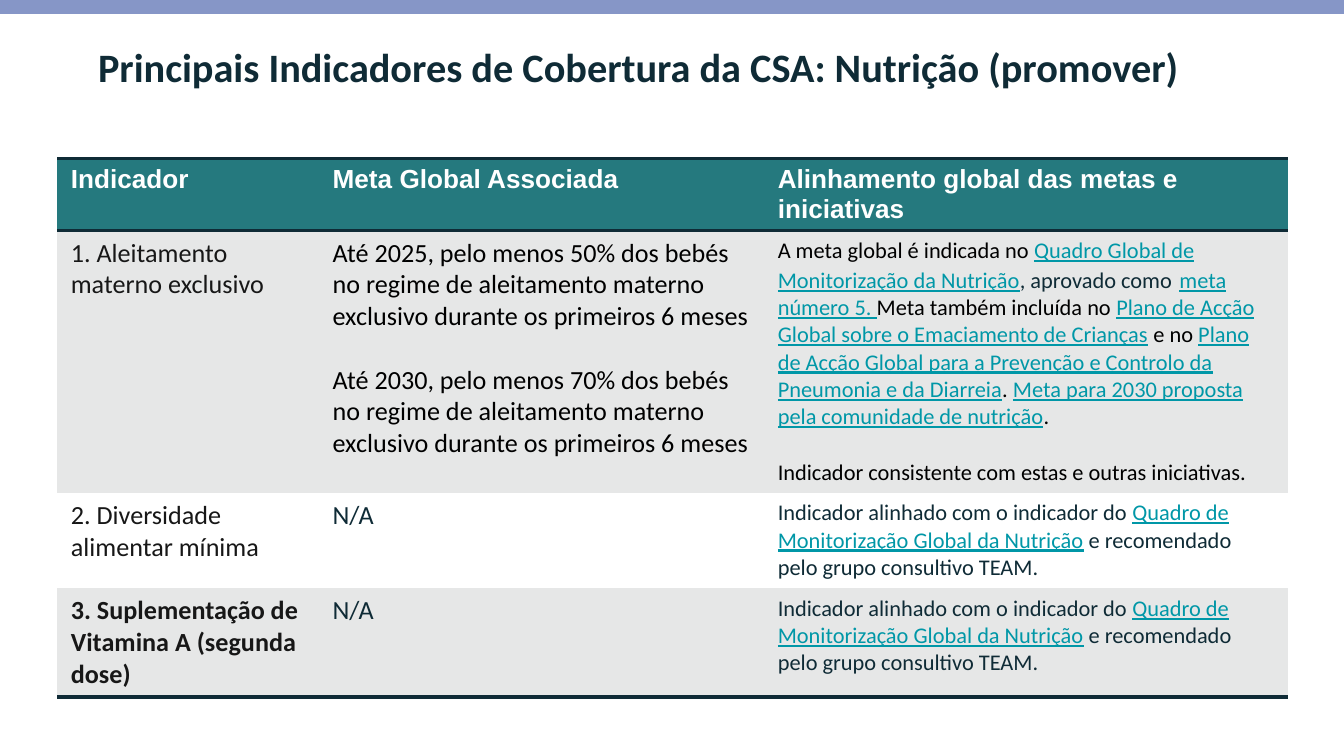
from dataclasses import dataclass

from lxml.etree import SubElement
from pptx import Presentation
from pptx.dml.color import RGBColor as Rgb
from pptx.enum.shapes import MSO_SHAPE as Shape
from pptx.enum.text import MSO_ANCHOR as Anchor, PP_ALIGN as Align
from pptx.oxml.ns import qn
from pptx.util import Pt

PX = 9525  # EMU per pixel, 96 pixels to the inch


@dataclass(frozen=True)
class Theme:
    bar: str = "8696C7"
    navy: str = "0F2B36"
    teal: str = "25797E"
    link: str = "0097A7"
    ink: str = "171717"
    black: str = "000000"
    white: str = "FFFFFF"
    band: str = "E6E7E7"
    body_font: str = "Calibri"
    head_font: str = "Arial"
    title_size: float = 21.6
    large: int = 14
    small: int = 12


theme = Theme()


def style_run(span, color, size, font=theme.body_font, bold=False, underline=False):
    span.font.name = font
    span.font.size = Pt(size)
    span.font.bold = bold
    span.font.underline = underline
    span.font.color.rgb = Rgb.from_string(color)


def add_border(cell, side):
    """Draw a 2 pt navy line on one side: lnT or lnB."""
    line = SubElement(cell._tc.get_or_add_tcPr(), qn(f"a:{side}"), w=str(Pt(2)))
    fill = SubElement(line, qn("a:solidFill"))
    SubElement(fill, qn("a:srgbClr"), val=theme.navy)


# Table text: each body cell is a list of paragraphs, each a list of (text, style)
STYLES = {
    "plain": dict(color=theme.black, size=theme.small),
    "navy": dict(color=theme.navy, size=theme.small),
    "link": dict(color=theme.link, size=theme.small, underline=True),
    "gap": dict(color=theme.navy, size=theme.large, font=theme.head_font),
    "name": dict(color=theme.ink, size=theme.large),
    "strong": dict(color=theme.ink, size=theme.large, bold=True),
    "target": dict(color=theme.black, size=theme.large),
    "none": dict(color=theme.navy, size=theme.large),
}
HEADERS = ["Indicador", "Meta Global Associada", "Alinhamento global das metas e iniciativas"]
targets = [
    [(f"Até {year}, pelo menos {share}% dos bebés no regime de aleitamento materno "
      "exclusivo durante os primeiros 6 meses", "target")]
    for year, share in [(2025, 50), (2030, 70)]
]
breastfeeding_alignment = [
    [
        ("A meta global é indicada no ", "plain"),
        ("Quadro Global de Monitorização da Nutrição", "link"),
        (", aprovado como", "navy"),
        (" ", "gap"),
        ("meta número 5. ", "link"),
        ("Meta também incluída no ", "plain"),
        ("Plano de Acção Global sobre o Emaciamento de Crianças", "link"),
        (" e no ", "plain"),
        ("Plano de Acção Global para a Prevenção e Controlo da Pneumonia e da Diarreia", "link"),
        (". ", "plain"),
        ("Meta para 2030 proposta pela comunidade de nutrição", "link"),
        (".", "plain"),
    ],
    [("Indicador consistente com estas e outras iniciativas.", "plain")],
]
framework_alignment = [[
    ("Indicador alinhado com o indicador do ", "navy"),
    ("Quadro de Monitorização Global da Nutrição", "link"),
    (" e recomendado pelo grupo consultivo TEAM.", "navy"),
]]
not_applicable = [[("N/A", "none")]]
ROWS = [
    [[[("1. Aleitamento materno exclusivo", "name")]], targets, breastfeeding_alignment],
    [[[("2. Diversidade alimentar mínima", "name")]], not_applicable, framework_alignment],
    [[[("3. Suplementação de Vitamina A (segunda dose)", "strong")]],
     not_applicable, framework_alignment],
]

# Deck and page
deck = Presentation()
deck.slide_width, deck.slide_height = 960 * PX, 540 * PX
page = deck.slides.add_slide(deck.slide_layouts[5])

# Top bar
bar = page.shapes.add_shape(Shape.RECTANGLE, 0, 0, 960 * PX, 10 * PX)
bar.shadow.inherit = False
bar.fill.solid()
bar.fill.fore_color.rgb = Rgb.from_string(theme.bar)
bar.line.fill.background()

# Title
title = page.shapes.title
title.left, title.top, title.width, title.height = 60 * PX, 20 * PX, 827 * PX, 71 * PX
frame = title.text_frame
frame.text = "Principais Indicadores de Cobertura da CSA: Nutrição (promover)"
frame.word_wrap = True
frame.vertical_anchor = Anchor.TOP
frame.margin_left = frame.margin_right = frame.margin_top = frame.margin_bottom = 10 * PX
frame.paragraphs[0].alignment = Align.LEFT
style_run(frame.paragraphs[0].runs[0], theme.navy, theme.title_size, bold=True)

# Table without a built-in style; rows grow with their text
COLUMN_WIDTHS = [187, 318, 374]
ROW_HEIGHT = 39
row_count = len(ROWS) + 1
table_box = page.shapes.add_table(
    row_count, len(HEADERS), 41 * PX, 113 * PX,
    sum(COLUMN_WIDTHS) * PX, row_count * ROW_HEIGHT * PX)
table = table_box.table
table.horz_banding = False
table._tbl.tblPr.find(qn("a:tableStyleId")).text = "{2D5ABB26-0587-4C30-8999-92F81FD0307C}"
for column, width in zip(table.columns, COLUMN_WIDTHS):
    column.width = width * PX

# Header row
for cell, text in zip(table.rows[0].cells, HEADERS):
    cell.text_frame.text = text
    style_run(cell.text_frame.paragraphs[0].runs[0], theme.white, theme.large,
              theme.head_font, bold=True)
    add_border(cell, "lnT")
    add_border(cell, "lnB")
    cell.fill.solid()
    cell.fill.fore_color.rgb = Rgb.from_string(theme.teal)

# Body rows, banded grey and white
for row_number, contents in enumerate(ROWS, start=1):
    for cell, paragraphs in zip(table.rows[row_number].cells, contents):
        for index, parts in enumerate(paragraphs):
            if index == 0:
                para = cell.text_frame.paragraphs[0]
            else:
                para = cell.text_frame.add_paragraph()
                para.space_before = Pt(round(STYLES[parts[0][1]]["size"] * 1.22))
            for text, style in parts:
                span = para.add_run()
                span.text = text
                style_run(span, **STYLES[style])
        if row_number == len(ROWS):
            add_border(cell, "lnB")
        cell.fill.solid()
        cell.fill.fore_color.rgb = Rgb.from_string(theme.band if row_number % 2 else theme.white)

deck.save("out.pptx")
